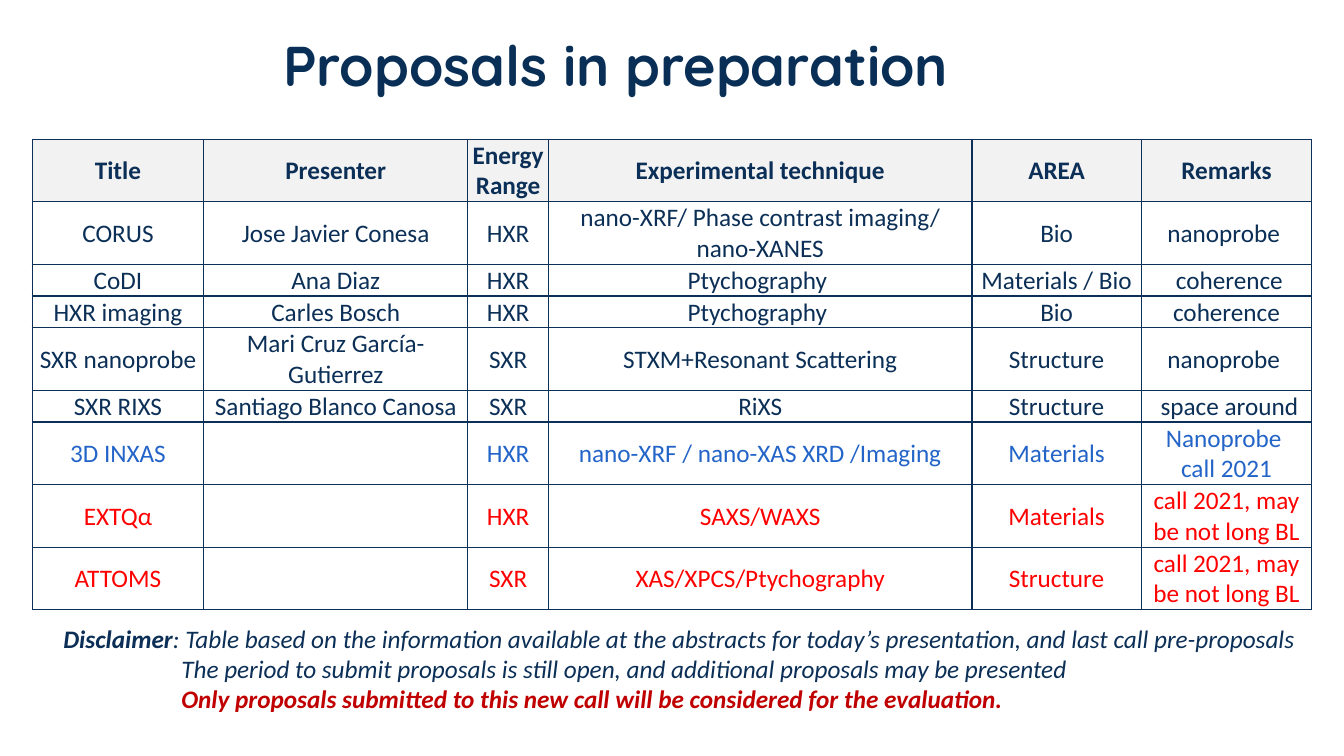
from typing import NamedTuple

import pptx
import pptx.dml.color
import pptx.enum.text
import pptx.oxml
import pptx.oxml.ns
import pptx.util

Inches = pptx.util.Inches
NAVY, BLUE, RED = "0B2F56", "2364C8", "FF0000"
BODY = "Calibri"


class Row(NamedTuple):
    cells: tuple[str, ...]
    lines: int = 1
    color: str = NAVY
    fill: str = "FFFFFF"
    bold: bool = False


class Span(NamedTuple):
    text: str
    color: str = NAVY
    bold: bool = False


WIDTHS = (1.7, 2.62, 0.8, 4.2, 1.68, 1.69)
HEIGHTS = {1: 0.31, 2: 0.61}
LATE = "call 2021, may be not long BL"
ROWS = (
    Row(("Title", "Presenter", "Energy Range", "Experimental technique", "AREA", "Remarks"),
        2, fill="F2F2F2", bold=True),
    Row(("CORUS", "Jose Javier Conesa", "HXR",
         "nano-XRF/ Phase contrast imaging/ nano-XANES", "Bio", "nanoprobe "), 2),
    Row(("CoDI", "Ana Diaz", "HXR", "Ptychography ", "Materials / Bio", " coherence")),
    Row(("HXR imaging", "Carles Bosch", "HXR", "Ptychography ", "Bio", "coherence")),
    Row(("SXR nanoprobe", "Mari Cruz García-Gutierrez", "SXR",
         "STXM+Resonant Scattering", "Structure", "nanoprobe "), 2),
    Row(("SXR RIXS", "Santiago Blanco Canosa", "SXR", "RiXS", "Structure", " space around")),
    Row(("3D INXAS", "", "HXR", "nano-XRF / nano-XAS XRD /Imaging", "Materials",
         "Nanoprobe \ncall 2021"), 2, BLUE),
    Row(("EXTQα", "", "HXR", "SAXS/WAXS", "Materials", LATE), 2, RED),
    Row(("ATTOMS", "", "SXR", "XAS/XPCS/Ptychography", "Structure", LATE), 2, RED),
)
NOTES = (
    (Span("Disclaimer", bold=True),
     Span(": Table based on the information available at the abstracts for today’s "
          "presentation, and last call pre-proposals")),
    (Span("The period to submit proposals is still open, "
          "and additional proposals may be presented"),),
    (Span("Only proposals submitted to this new call will be considered for the evaluation.",
          "C00000", True),),
)


def paint(item, color: str) -> None:
    item.rgb = pptx.dml.color.RGBColor.from_string(color)


def style(run, color: str, size: float = 18, bold: bool = False,
          face: str = BODY, slant: bool = False) -> None:
    font = run.font
    font.name, font.size = face, pptx.util.Pt(size)
    font.bold, font.italic = bold, slant
    paint(font.color, color)


def border(cell) -> None:
    props = cell._tc.get_or_add_tcPr()
    for side in "LRTB":
        props.append(pptx.oxml.parse_xml(
            f'<a:ln{side} {pptx.oxml.ns.nsdecls("a")} w="12700"><a:solidFill>'
            f'<a:srgbClr val="{NAVY}"/></a:solidFill></a:ln{side}>'))


def set_cell(cell, text: str, row: Row) -> None:
    border(cell)
    cell.fill.solid()
    paint(cell.fill.fore_color, row.fill)
    cell.margin_left = cell.margin_right = cell.margin_top = Inches(0.01)
    cell.margin_bottom = 0
    cell.vertical_anchor = pptx.enum.text.MSO_ANCHOR.MIDDLE
    cell.text_frame.text = text
    for para in cell.text_frame.paragraphs:
        para.alignment = pptx.enum.text.PP_ALIGN.CENTER
        for run in para.runs:
            style(run, row.color, bold=row.bold)


def add_box(slide, left: float, top: float, width: float, height: float):
    box = slide.shapes.add_textbox(Inches(left), Inches(top), Inches(width), Inches(height))
    box.text_frame.word_wrap = True
    return box.text_frame


def add_grid(slide) -> None:
    tall = [HEIGHTS[row.lines] for row in ROWS]
    table = slide.shapes.add_table(
        len(ROWS), len(WIDTHS), Inches(0.32), Inches(1.38),
        Inches(sum(WIDTHS)), Inches(sum(tall))).table
    table.horz_banding = False
    for col, width in zip(table.columns, WIDTHS):
        col.width = Inches(width)
    for line, high, row in zip(table.rows, tall, ROWS):
        line.height = Inches(high)
        for cell, text in zip(line.cells, row.cells):
            set_cell(cell, text, row)


def add_notes(slide) -> None:
    frame = add_box(slide, 0.53, 6.13, 12.75, 1.01)
    for index, spans in enumerate(NOTES):
        para = frame.add_paragraph() if index else frame.paragraphs[0]
        if index:
            # Align later lines under the text after the label
            para._p.get_or_add_pPr().set("marL", str(Inches(1.17)))
        for span in spans:
            run = para.add_run()
            run.text = span.text
            style(run, span.color, bold=span.bold, slant=True)


def main() -> None:
    deck = pptx.Presentation()
    deck.slide_width, deck.slide_height = Inches(13.33), Inches(7.5)
    slide = deck.slides.add_slide(deck.slide_layouts[6])

    # Proposal table
    add_grid(slide)

    # Title
    title = add_box(slide, 2.71, 0.25, 10.45, 0.77)
    title.text = "Proposals in preparation"
    style(title.paragraphs[0].runs[0], "092F56", 40, True, "Quicksand")

    # Disclaimer
    add_notes(slide)
    deck.save("out.pptx")


if __name__ == "__main__":
    main()
